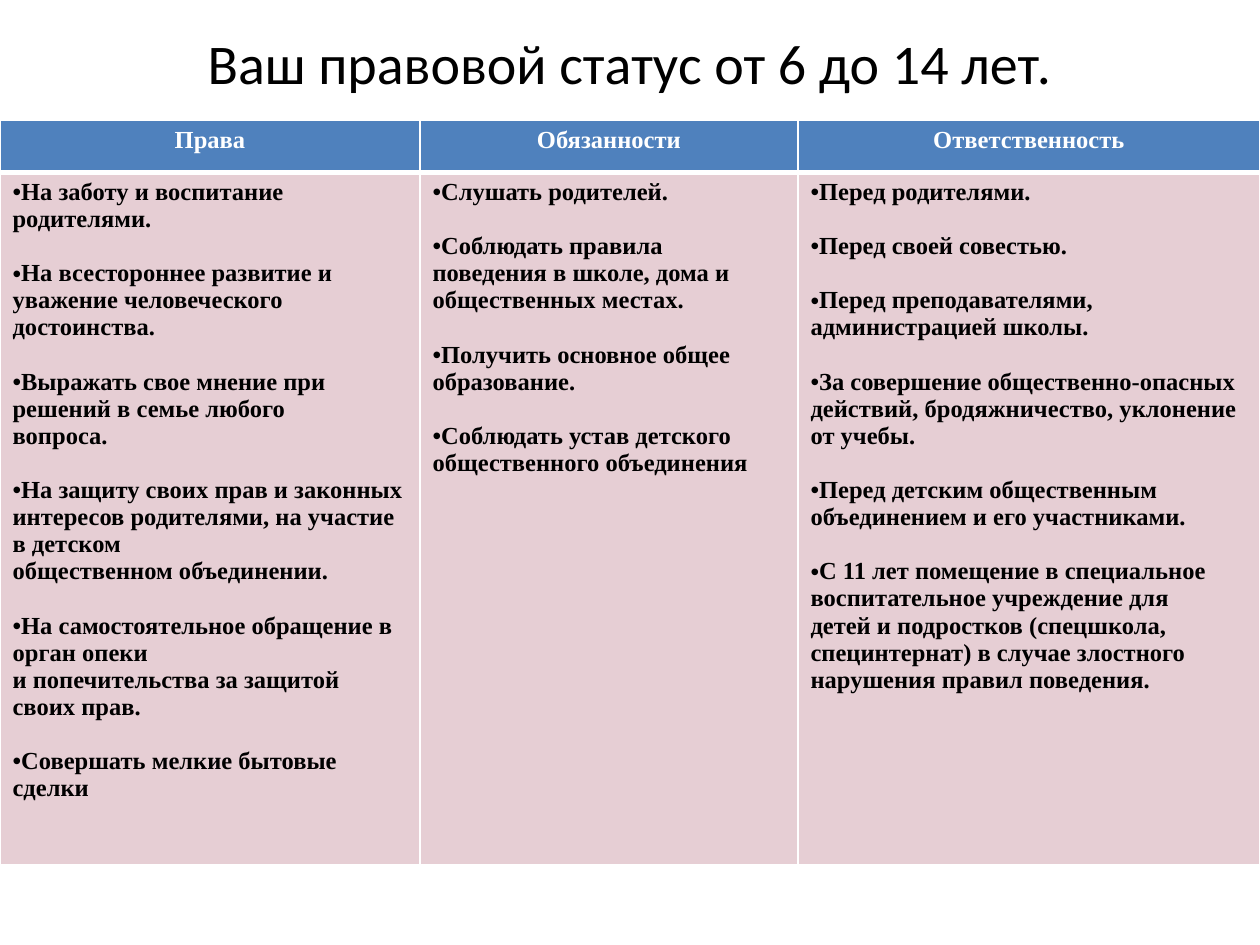
import copy

import pptx
import pptx.dml.color
import pptx.enum.text
import pptx.oxml
import pptx.oxml.ns
import pptx.util

Pt = pptx.util.Pt
Align = pptx.enum.text.PP_ALIGN
Anchor = pptx.enum.text.MSO_ANCHOR
NS = pptx.oxml.ns.nsdecls("a")

WHITE, BLACK, BLUE, PINK = "FFFFFF", "000000", "4F81BD", "E6CED4"
THIN, THICK = 1, 3
GAP = 15.5  # one line of 14 pt text

# A new item starts a bullet; an item in a tuple ends with an unmarked paragraph.
# "\v" marks a line break.
TABLE = {
    "Права": [
        "На заботу и воспитание родителями.",
        "На всестороннее развитие и уважение человеческого достоинства.",
        "Выражать свое мнение при\vрешений в семье любого\vвопроса.",
        "На защиту своих прав и законных интересов родителями, "
        "на участие в детском\vобщественном объединении.",
        ("На самостоятельное обращение в орган опеки",
         "и попечительства за защитой своих прав."),
        "Совершать мелкие бытовые сделки",
    ],
    "Обязанности": [
        "Слушать родителей.",
        "Соблюдать правила\vповедения в школе, дома и общественных местах.",
        "Получить основное общее образование.",
        "Соблюдать устав детского общественного объединения",
    ],
    "Ответственность": [
        "Перед родителями.",
        "Перед своей совестью.",
        "Перед преподавателями,\vадминистрацией школы.",
        "За совершение общественно-опасных действий, бродяжничество, "
        "уклонение от учебы.",
        "Перед детским общественным объединением и его участниками.",
        "С 11 лет помещение в специальное воспитательное учреждение для\v"
        "детей и подростков (спецшкола, специнтернат) в случае злостного "
        "нарушения правил поведения.",
    ],
}


def color(code):
    return pptx.dml.color.RGBColor.from_string(code)


def write(para, text, font="Times New Roman", size=14, fill=BLACK, bold=True,
          align=Align.LEFT, before=0, bullet=False):
    para.text = text
    if bullet:
        props = para._p.get_or_add_pPr()
        props.set("marL", "0")
        props.set("indent", "0")
        props.append(pptx.oxml.parse_xml(f'<a:buFont {NS} typeface="Arial"/>'))
        props.append(pptx.oxml.parse_xml(f'<a:buChar {NS} char="•"/>'))
    para.alignment = align
    para.space_before = Pt(before)
    for run in para.runs:
        run.font.name = font
        run.font.size = Pt(size)
        run.font.bold = bold
        run.font.color.rgb = color(fill)
    for mark in para._p.findall(pptx.oxml.ns.qn("a:br")):
        mark.insert(0, copy.deepcopy(para.runs[0]._r.rPr))


class Deck:
    """Holds the style and the current slide."""

    def __init__(self, wide, high):
        self.show = pptx.Presentation()
        self.show.slide_width = Pt(wide)
        self.show.slide_height = Pt(high)
        self.slide = self.show.slides.add_slide(self.show.slide_layouts[5])

    def title(self, text, left, top, wide, high):
        box = self.slide.shapes.title
        box.left, box.top, box.width, box.height = map(Pt, (left, top, wide, high))
        box.text_frame.vertical_anchor = Anchor.MIDDLE
        write(box.text_frame.paragraphs[0], text, font="Calibri", size=32,
              bold=False, align=Align.CENTER)

    def table(self, data, left, top, cols, rows):
        frame = self.slide.shapes.add_table(
            len(rows), len(cols), Pt(left), Pt(top), Pt(sum(cols)), Pt(sum(rows)))
        grid = frame.table
        grid.horz_banding = False
        for row, high in zip(grid.rows, rows):
            row.height = Pt(high)
        for num, (wide, (head, items)) in enumerate(zip(cols, data.items())):
            grid.columns[num].width = Pt(wide)
            self.head(grid.cell(0, num), head)
            self.body(grid.cell(1, num), items)

    def head(self, cell, text):
        self.paint(cell, BLUE, THIN, THICK)
        write(cell.text_frame.paragraphs[0], text, fill=WHITE, align=Align.CENTER)

    def body(self, cell, items):
        self.paint(cell, PINK, THICK, THIN)
        frame = cell.text_frame
        for num, item in enumerate(items):
            first, *rest = item if isinstance(item, tuple) else (item,)
            para = frame.add_paragraph() if num else frame.paragraphs[0]
            write(para, first, before=GAP if num else 0, bullet=True)
            for text in rest:
                write(frame.add_paragraph(), text)

    def paint(self, cell, fill, top, bottom):
        """Set the borders and fill of a cell."""
        props = cell._tc.get_or_add_tcPr()
        for side, size in zip("LRTB", (THIN, THIN, top, bottom)):
            props.append(pptx.oxml.parse_xml(
                f'<a:ln{side} {NS} w="{Pt(size)}"><a:solidFill>'
                f'<a:srgbClr val="{WHITE}"/></a:solidFill></a:ln{side}>'))
        cell.fill.solid()
        cell.fill.fore_color.rgb = color(fill)


def main():
    deck = Deck(720, 540)
    deck.title("Ваш правовой статус от 6 до 14 лет.", 0, 0, 720, 70.5)
    deck.table(TABLE, 0, 69, cols=(240, 216, 264), rows=(29.5, 395.5))
    deck.show.save("out.pptx")


if __name__ == "__main__":
    main()
